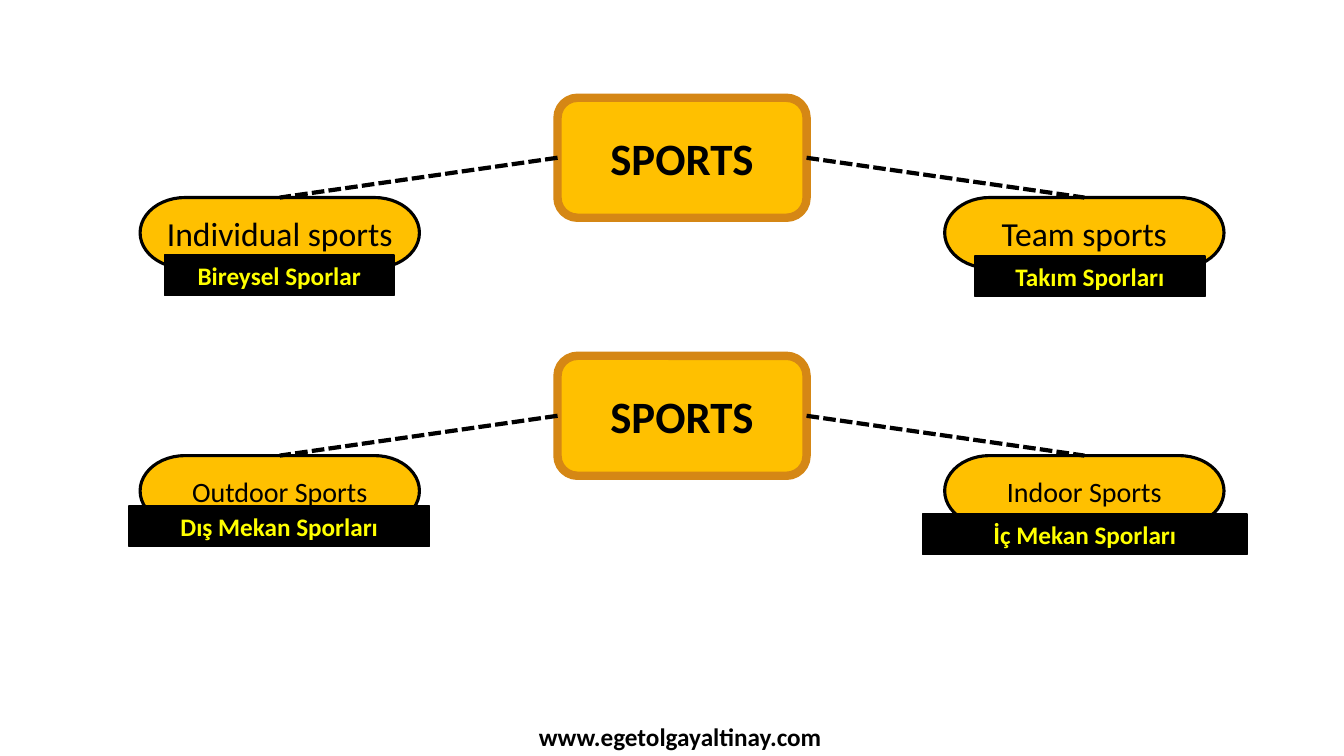
from pptx import Presentation
from pptx.dml.color import RGBColor
from pptx.enum.dml import MSO_LINE
from pptx.enum.shapes import MSO_CONNECTOR, MSO_SHAPE
from pptx.enum.text import MSO_ANCHOR, PP_ALIGN
from pptx.oxml.ns import qn
from pptx.util import Inches, Pt
from lxml import etree

AMBER = RGBColor(0xFF, 0xC0, 0x00)
ORANGE = RGBColor(0xD5, 0x87, 0x15)
BLACK = RGBColor(0x00, 0x00, 0x00)
YELLOW = RGBColor(0xFF, 0xFF, 0x00)

TREE_LEFT, TREE_W = 1.39, 10.75
ROOT_W, ROOT_H = 2.47, 1.19
BRANCH_W, BRANCH_H, BRANCH_DROP = 2.77, 0.7, 0.99
CAPTION_H = 0.4


def set_text(sp, text, size, color=BLACK, bold=False, anchor=MSO_ANCHOR.MIDDLE):
    tf = sp.text_frame
    tf.word_wrap = True
    tf.vertical_anchor = anchor
    tf.text = text
    p = tf.paragraphs[0]
    p.alignment = PP_ALIGN.CENTER
    font = p.runs[0].font
    font.name, font.size, font.bold = "Calibri", Pt(size), bold
    font.color.rgb = color


def add_box(s, kind, left, top, width, height, fill, line, line_w):
    sp = s.shapes.add_shape(kind, Inches(left), Inches(top),
                            Inches(width), Inches(height))
    sp.shadow.inherit = False
    sp.fill.solid()
    sp.fill.fore_color.rgb = fill
    sp.line.color.rgb = line
    sp.line.width = Pt(line_w)
    return sp


def add_link(s, root, root_site, branch):
    """Dashed line from a side of the root to the top of a branch."""
    link = s.shapes.add_connector(MSO_CONNECTOR.STRAIGHT, 0, 0, 0, 0)
    link.begin_connect(root, root_site)
    link.end_connect(branch, 0)
    link.line.color.rgb = BLACK
    link.line.width = Pt(3)
    link.line.dash_style = MSO_LINE.SQUARE_DOT
    etree.SubElement(link._element.spPr, qn("a:effectLst"))


def add_tree(s, left, top, width, size, branches):
    """Root in the middle, one captioned branch at each end."""
    root = add_box(s, MSO_SHAPE.ROUNDED_RECTANGLE, left + (width - ROOT_W) / 2, top,
                   ROOT_W, ROOT_H, AMBER, ORANGE, 6)
    set_text(root, "SPORTS", 32, bold=True)

    ends = ((left, 1), (left + width - BRANCH_W, 3))
    for (x, root_site), (label, caption, dx, dy, caption_w) in zip(ends, branches):
        y = top + BRANCH_DROP
        branch = add_box(s, MSO_SHAPE.FLOWCHART_TERMINATOR, x, y,
                         BRANCH_W, BRANCH_H, AMBER, BLACK, 2.25)
        set_text(branch, label, size)
        add_link(s, root, root_site, branch)
        # Turkish caption over the lower edge of the branch
        sp = add_box(s, MSO_SHAPE.RECTANGLE, x + dx, y + dy,
                     caption_w, CAPTION_H, BLACK, BLACK, 1)
        set_text(sp, caption, 18, YELLOW, True, MSO_ANCHOR.TOP)


def add_footer(s, left, top, width, height):
    tb = s.shapes.add_textbox(Inches(left), Inches(top), Inches(width), Inches(height))
    set_text(tb, "www.egetolgayaltinay.com", 18, bold=True, anchor=MSO_ANCHOR.TOP)


# Each branch: label, caption, caption offset from the branch, caption width
TREES = [
    (0.97, 24, [("Individual sports", "Bireysel Sporlar", 0.24, 0.57, 2.28),
                ("Team sports", "Takım Sporları", 0.3, 0.58, 2.28)]),
    (3.53, 20, [("Outdoor Sports", "Dış Mekan Sporları", -0.11, 0.5, 2.98),
                ("Indoor Sports", "İç Mekan Sporları", -0.22, 0.58, 3.22)]),
]


def main():
    prs = Presentation()
    prs.slide_width, prs.slide_height = Inches(13.33), Inches(7.5)
    s = prs.slides.add_slide(prs.slide_layouts[6])
    for top, size, branches in TREES:
        add_tree(s, TREE_LEFT, top, TREE_W, size, branches)
    add_footer(s, 4.59, 7.11, 4.31, 0.4)
    prs.save("out.pptx")


if __name__ == "__main__":
    main()
